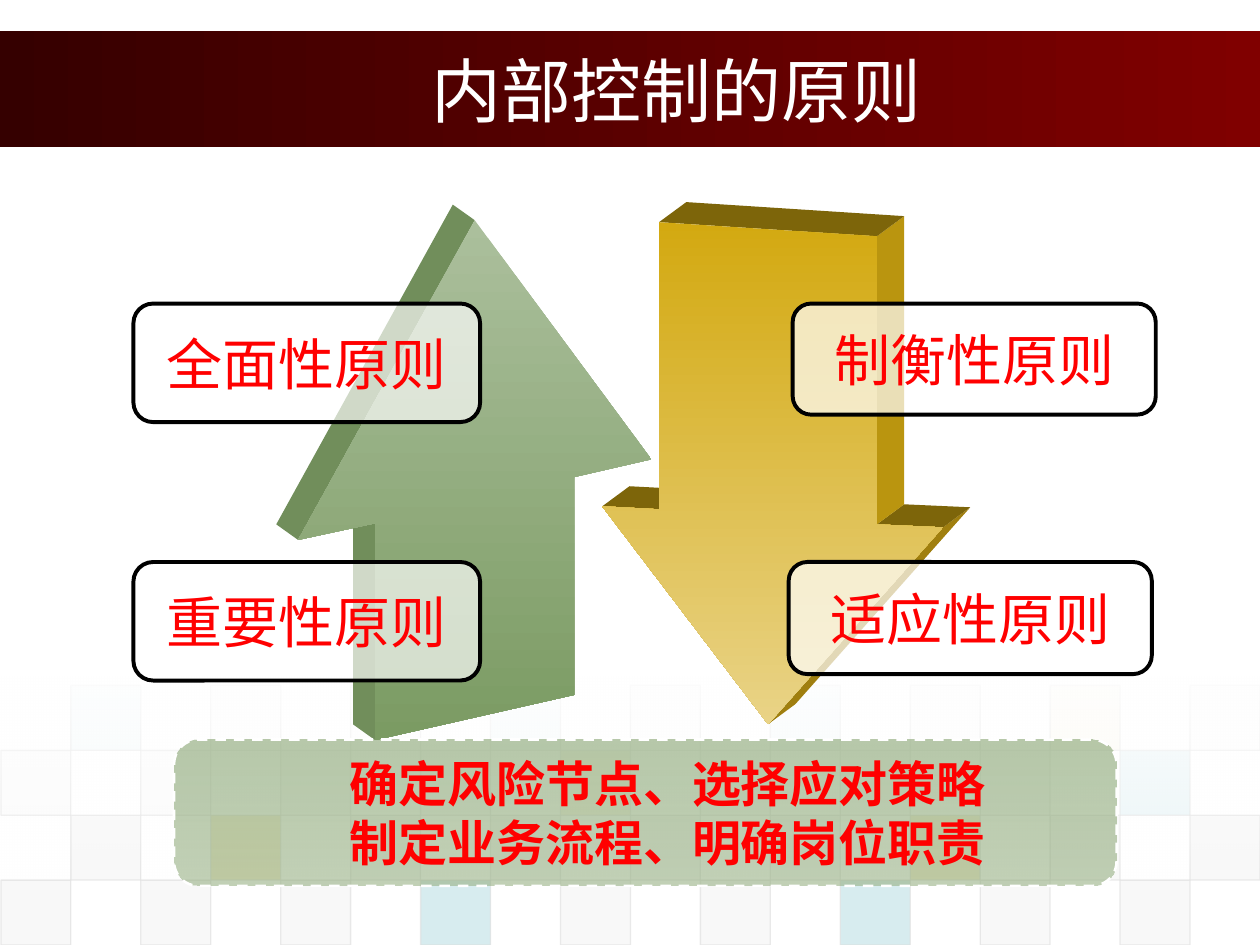
from lxml.etree import SubElement as Sub
from pptx import Presentation
from pptx.dml.color import RGBColor as RGB
from pptx.enum.dml import MSO_LINE as Dash
from pptx.enum.shapes import MSO_SHAPE as Kind
from pptx.enum.text import MSO_ANCHOR as Anchor, PP_ALIGN as Align
from pptx.oxml.ns import qn
from pptx.util import Cm, Pt

WHITE = RGB(0xFF, 0xFF, 0xFF)
BLACK = RGB(0, 0, 0)
RED = RGB(0xFF, 0, 0)
MAROON = RGB(0x35, 0, 0), RGB(0x80, 0, 0)
GREY = RGB(0xDD, 0xDD, 0xDD)
TILES = {"D": GREY, "E": RGB(0xEA, 0xEA, 0xEA),
         "T": RGB(0x38, 0xA3, 0xB2), "G": RGB(0xD3, 0xA9, 0x11)}
GREEN = RGB(0xAB, 0xBF, 0x9C), RGB(0x7B, 0x9B, 0x63)
MOSS = RGB(0x71, 0x8E, 0x5B)
GOLD = RGB(0xD3, 0xA9, 0x11), RGB(0xE9, 0xD3, 0x86)
AMBER = RGB(0xBA, 0x95, 0x0F)
BRONZE = RGB(0xA0, 0x7F, 0x0F)
BROWN = RGB(0x7D, 0x65, 0x0A)
SAGE = RGB(0x7B, 0x9B, 0x63), RGB(0x97, 0xB0, 0x83)

WIDE, HIGH = 25.4, 19.05


def fade(node, alphas):
    """Give each colour below node its opacity in percent."""
    for clr, alpha in zip(list(node.iter(qn("a:srgbClr"))), alphas):
        Sub(clr, qn("a:alpha")).set("val", str(alpha * 1000))


def paint(shape, color, alphas=(), angle=270):
    """Fill with one colour, or with a gradient when given a pair."""
    shape.shadow.inherit = False
    shape.line.fill.background()
    fill = shape.fill
    if isinstance(color, RGB):
        fill.solid()
        fill.fore_color.rgb = color
    else:
        fill.gradient()
        fill.gradient_angle = angle
        for stop, tone, pos in zip(fill.gradient_stops, color, (0, 1)):
            stop.color.rgb = tone
            stop.position = pos
    fade(shape.fill._xPr, alphas)


def block(slide, kind, box, color, alphas=(), angle=270):
    shape = slide.shapes.add_shape(kind, *map(Cm, box))
    paint(shape, color, alphas, angle)
    return shape


def edge(shape, color, width, dash=Dash.SOLID):
    line = shape.line
    line.color.rgb = color
    for name, value in {"width": Pt(width), "dash_style": dash}.items():
        setattr(line, name, value)


def write(shape, lines, look, frame):
    """Set centred lines of text with the given font and frame values."""
    text = shape.text_frame
    text.text = "\n".join(lines)
    for name, value in frame.items():
        setattr(text, name, value)
    for para in text.paragraphs:
        para.alignment = Align.CENTER
        for run in para.runs:
            for name, value in look["font"].items():
                setattr(run.font, name, value)
            run.font.color.rgb = look["color"]


def head(slide, box):
    """Maroon band with the slide title."""
    left, top, wide, high = box
    block(slide, Kind.RECTANGLE, box, MAROON, angle=0)
    title = slide.shapes.title
    place = {"left": left + 3.38, "top": top, "width": 20.52, "height": high}
    for name, value in place.items():
        setattr(title, name, Cm(value))
    look = {"font": {"name": "Arial", "size": Pt(40)}, "color": WHITE}
    write(title, ["内部控制的原则"], look, {"vertical_anchor": Anchor.MIDDLE})
    slide.shapes._spTree.append(title._element)


def mosaic(slide, box):
    """Checkered tiles that fade out upwards."""
    left, top, wide, high = box
    rows = (("TEETDTEGE", 5, 1), ("DDDDGDDDT", 10, 0),
            ("DGDDDDGDD", 20, 1), ("DDDTDDTDD", 20, 0))
    step, tall = wide / 18, high / len(rows)
    for row, (codes, alpha, shift) in enumerate(rows):
        for col, code in enumerate(codes):
            spot = left + (2 * col + shift) * step, top + row * tall, step, tall
            tile = block(slide, Kind.RECTANGLE, spot, TILES[code], [alpha])
            edge(tile, GREY, 0.75)
            fade(tile.line._ln, [60])
    block(slide, Kind.RECTANGLE, (0, top - 0.18, WIDE, 4.11),
          (WHITE, WHITE), [90, 0])


def outline(slide, box, points, color):
    """Closed shape whose points are percentages of the box."""
    left, top, wide, high = box
    spots = [(Cm(left + wide * x / 100), Cm(top + high * y / 100))
             for x, y in points]
    path = slide.shapes.build_freeform(*spots[0])
    path.add_line_segments(spots[1:], close=True)
    paint(path.convert_to_shape(), color)


def arrow(slide, box, front, depth, sides, color):
    """Solid arrow: side faces run from front edges back by depth."""
    for start, tone in sides:
        pair = front[start], front[(start + 1) % len(front)]
        back = [(x + depth[0], y + depth[1]) for x, y in reversed(pair)]
        outline(slide, box, [*pair, *back], tone)
    outline(slide, box, front, color)


def arrows(slide):
    rise = [(50, 0), (100, 46), (78.2, 49.4), (78.2, 91.3),
            (21.8, 100), (21.8, 58.3), (0, 61.5)]
    arrow(slide, (6.01, 4.44, 7.12, 10.48), rise, (-6.2, -3),
          [(4, MOSS), (6, MOSS)], GREEN)
    fall = [(16.7, 0), (80.6, 2.8), (80.6, 60.2), (100, 60.8),
            (48.7, 100), (0, 56.6), (16.7, 57.2)]
    arrow(slide, (12.14, 4.48, 6.87, 10.12), fall, (8, -4),
          [(3, BRONZE), (5, BROWN), (2, BROWN), (1, AMBER), (0, BROWN)], GOLD)


def label(slide, box, words, alpha):
    """Rounded see-through card naming one principle."""
    card = block(slide, Kind.ROUNDED_RECTANGLE, box, WHITE, [alpha])
    edge(card, BLACK, 2.25)
    look = {"font": {"name": "DejaVu Sans", "size": Pt(32)}, "color": RED}
    write(card, [words], look,
          {"word_wrap": False, "vertical_anchor": Anchor.MIDDLE})


def banner(slide, box):
    """Dashed summary panel."""
    panel = block(slide, Kind.ROUNDED_RECTANGLE, box, SAGE, [54, 59])
    edge(panel, WHITE, 1.5, Dash.DASH)
    look = {"font": {"name": "Calibri", "size": Pt(28), "bold": True},
            "color": RED}
    write(panel, ["确定风险节点、选择应对策略", "制定业务流程、明确岗位职责"], look,
          {"word_wrap": True, "vertical_anchor": Anchor.MIDDLE,
           "margin_left": Cm(1.15)})


def main():
    deck = Presentation()
    deck.slide_width, deck.slide_height = Cm(WIDE), Cm(HIGH)
    slide = deck.slides.add_slide(deck.slide_layouts[5])
    mosaic(slide, (0.02, 13.82, WIDE - 0.02, HIGH - 13.82))
    arrows(slide)
    label(slide, (2.69, 6.12, 6.99, 2.39), "全面性原则", 67)
    label(slide, (2.69, 11.33, 6.99, 2.39), "重要性原则", 67)
    label(slide, (15.98, 6.12, 7.32, 2.24), "制衡性原则", 70)
    label(slide, (15.9, 11.33, 7.32, 2.26), "适应性原则", 70)
    banner(slide, (3.51, 14.91, 19, 2.95))
    head(slide, (0, 0.63, WIDE, 2.34))
    deck.save("out.pptx")


if __name__ == "__main__":
    main()
